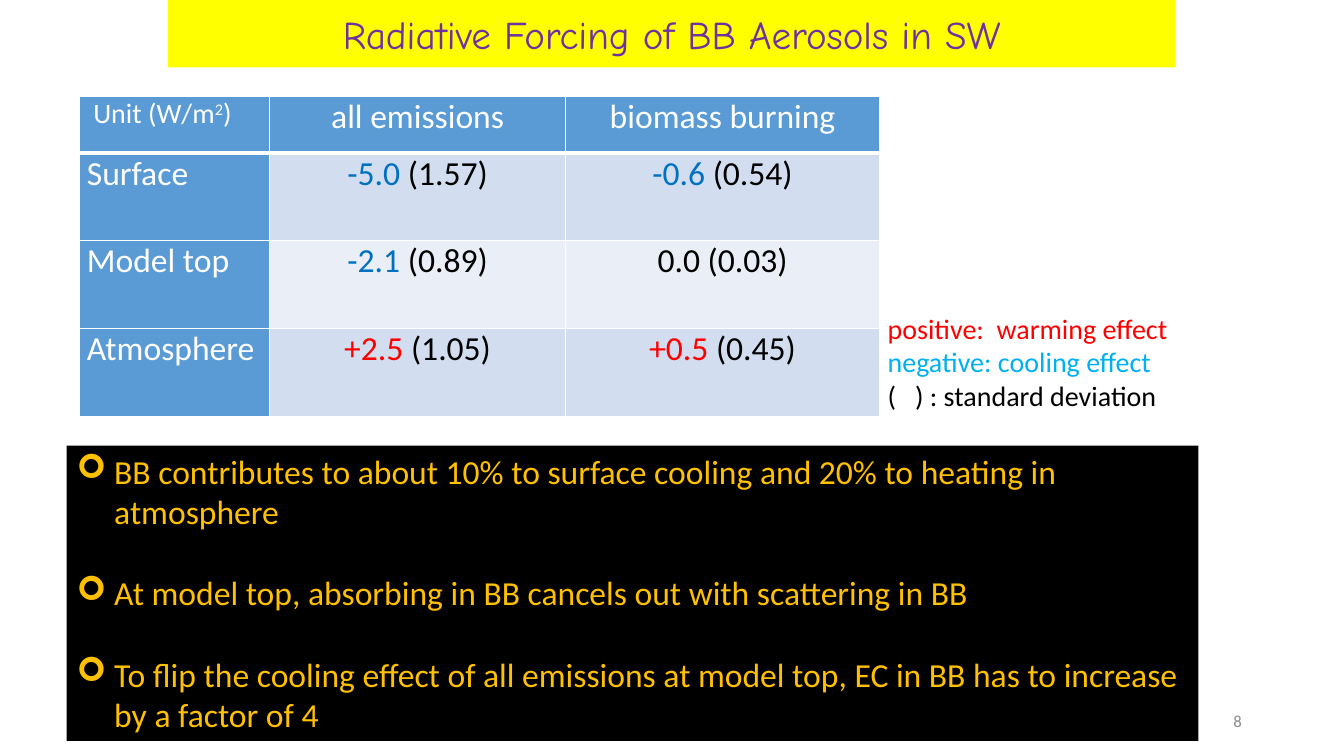
from dataclasses import dataclass

from lxml.etree import SubElement
from pptx import Presentation
from pptx.dml.color import RGBColor
from pptx.enum.shapes import MSO_SHAPE
from pptx.enum.text import MSO_ANCHOR, PP_ALIGN
from pptx.oxml.ns import qn
from pptx.util import Cm, Pt


@dataclass(frozen=True)
class Theme:
    body: str = "Calibri"
    script: str = "Comic Neue"
    title: int = 28
    text: int = 24
    small: int = 20
    note: int = 12
    white: str = "FFFFFF"
    black: str = "000000"
    yellow: str = "FFFF00"
    purple: str = "7030A0"
    gold: str = "FFC000"
    grey: str = "8C8C8C"
    red: str = "FF0000"
    sky: str = "00B0F0"
    cool: str = "0070C0"
    head: str = "5B9BD5"
    bands: tuple = ("D2DEEF", "EAEFF7")


THEME = Theme()
CENTER = PP_ALIGN.CENTER
ROWS = [
    ("Surface", "-5.0 (1.57)", "-0.6 (0.54)"),
    ("Model top", "-2.1 (0.89)", "0.0 (0.03)"),
    ("Atmosphere", "+2.5 (1.05)", "+0.5 (0.45)"),
]
LEGEND = [
    ("positive:  warming effect", THEME.red),
    ("negative: cooling effect", THEME.sky),
    ("(   ) : standard deviation", THEME.black),
]
POINTS = [
    "BB contributes to about 10% to surface cooling and 20% to heating in atmosphere",
    "At model top, absorbing in BB cancels out with scattering in BB",
    "To flip the cooling effect of all emissions at model top, EC in BB has to increase by a factor of 4",
]


def write(para, text, size=THEME.text, color=THEME.black, font=THEME.body,
          align=PP_ALIGN.LEFT, raised=False):
    """Append one formatted run to a paragraph."""
    para.alignment = align
    run = para.add_run()
    run.text = text
    run.font.name = font
    run.font.size = Pt(size)
    run.font.bold = False
    run.font.color.rgb = RGBColor.from_string(color)
    if raised:
        run._r.get_or_add_rPr().set("baseline", "30000")


def next_para(frame, index):
    return frame.add_paragraph() if index else frame.paragraphs[0]


def paint(fill, color):
    fill.solid()
    fill.fore_color.rgb = RGBColor.from_string(color)


def add_panel(slide, box, color, anchor):
    panel = slide.shapes.add_shape(MSO_SHAPE.RECTANGLE, *map(Cm, box))
    panel.shadow.inherit = False
    panel.line.fill.background()
    paint(panel.fill, color)
    panel.text_frame.word_wrap = True
    panel.text_frame.vertical_anchor = anchor
    return panel.text_frame


def add_text(slide, box, anchor=MSO_ANCHOR.TOP):
    frame = slide.shapes.add_textbox(*map(Cm, box)).text_frame
    frame.word_wrap = True
    frame.vertical_anchor = anchor
    return frame


def add_bullet(para):
    props = para._p.get_or_add_pPr()
    props.set("marL", str(Cm(0.95)))
    props.set("indent", str(-Cm(0.95)))
    SubElement(props, qn("a:buFont"), typeface="Wingdings")
    SubElement(props, qn("a:buChar"), char="➢")


def add_points(slide):
    frame = add_panel(slide, (1.68, 11.23, 28.52, 7.44), THEME.black, MSO_ANCHOR.TOP)
    for index, point in enumerate(POINTS):
        para = next_para(frame, index)
        para.space_before = Pt(29.3 if index else 0)
        add_bullet(para)
        write(para, point, color=THEME.gold)


def style_cell(cell, color, base=1):
    """Set margins, white borders and fill; base is the bottom line's width."""
    cell.margin_left = cell.margin_right = Cm(0.18)
    cell.margin_top = cell.margin_bottom = 0
    props = cell._tc.get_or_add_tcPr()
    for side, width in (("L", 1), ("R", 1), ("T", 1), ("B", base)):
        line = SubElement(props, qn(f"a:ln{side}"), w=str(Pt(width)))
        solid = SubElement(line, qn("a:solidFill"))
        SubElement(solid, qn("a:srgbClr"), val=THEME.white)
    paint(cell.fill, color)


def write_value(para, text):
    """Colour a signed value, and leave its deviation black."""
    value, spread = text.split(" ")
    color = {"-": THEME.cool, "+": THEME.red}.get(value[0], THEME.black)
    write(para, value + " ", color=color, align=CENTER)
    write(para, spread, align=CENTER)


def add_grid(slide):
    widths, heights = (4.78, 7.47, 7.9), (1.42, 2.21, 2.21, 2.21)
    grid = slide.shapes.add_table(
        len(heights), len(widths), Cm(2.01), Cm(2.44),
        Cm(sum(widths)), Cm(sum(heights))).table
    for col, width in zip(grid.columns, widths):
        col.width = Cm(width)
    for row, height in zip(grid.rows, heights):
        row.height = Cm(height)

    for col, label in enumerate(("", "all emissions", "biomass burning")):
        cell = grid.cell(0, col)
        style_cell(cell, THEME.head, base=3)
        if label:
            write(cell.text_frame.paragraphs[0], label, color=THEME.white, align=CENTER)
    unit = grid.cell(0, 0)
    unit.margin_left = Cm(0.34)
    for part in ("Unit (W/m", "2", ")"):
        write(unit.text_frame.paragraphs[0], part, size=THEME.small,
              color=THEME.white, raised=part == "2")

    for row, texts in enumerate(ROWS, 1):
        for col, text in enumerate(texts):
            cell = grid.cell(row, col)
            para = cell.text_frame.paragraphs[0]
            if col:
                style_cell(cell, THEME.bands[(row - 1) % 2])
                write_value(para, text)
            else:
                style_cell(cell, THEME.head)
                write(para, text, color=THEME.white)


def main():
    deck = Presentation()
    deck.slide_width, deck.slide_height = Cm(33.87), Cm(19.05)
    slide = deck.slides.add_slide(deck.slide_layouts[6])

    number = add_text(slide, (23.93, 17.65, 7.62, 1.02), MSO_ANCHOR.MIDDLE)
    write(number.paragraphs[0], "8", size=THEME.note, color=THEME.grey,
          align=PP_ALIGN.RIGHT)
    title = add_panel(slide, (4.23, 0, 25.4, 1.7), THEME.yellow, MSO_ANCHOR.MIDDLE)
    write(title.paragraphs[0], "Radiative Forcing of BB Aerosols in SW",
          size=THEME.title, color=THEME.purple, font=THEME.script, align=CENTER)
    legend = add_text(slide, (22.12, 7.72, 11.73, 2.82))
    for index, (text, color) in enumerate(LEGEND):
        write(next_para(legend, index), text, size=THEME.small, color=color)
    add_points(slide)
    add_grid(slide)
    deck.save("out.pptx")


if __name__ == "__main__":
    main()
